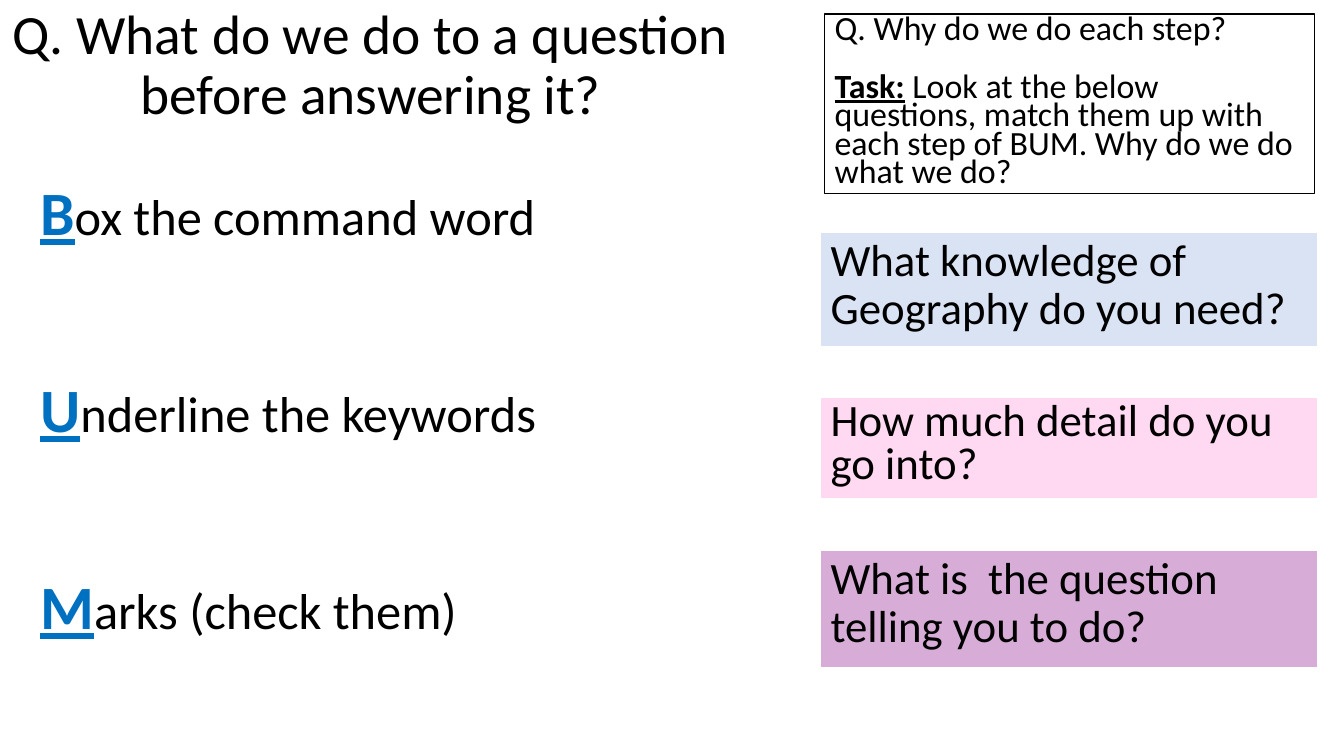
from dataclasses import dataclass

from lxml.etree import SubElement
from pptx import Presentation
from pptx.dml.color import RGBColor
from pptx.enum.shapes import MSO_SHAPE
from pptx.enum.text import MSO_ANCHOR, PP_ALIGN
from pptx.oxml.ns import qn
from pptx.util import Inches, Pt


@dataclass(frozen=True)
class Theme:
    font: str = "Calibri"
    ink: str = "000000"
    accent: str = "0070C0"
    paper: str = "FFFFFF"
    blue: str = "DAE3F3"
    pink: str = "FF8AD8"
    purple: str = "942093"
    title_size: float = 39.6
    initial_size: float = 44
    step_size: float = 36
    prompt_size: float = 32
    task_size: float = 24.2


THEME = Theme()
STEPS = ["Box the command word", "Underline the keywords", "Marks (check them)"]
PROMPTS = [
    ("What knowledge of Geography do you need?", 2.31, 1.13, THEME.blue, 100, 0.9),
    ("How much detail do you go into?", 3.94, 1.01, THEME.pink, 32, 0.8),
    ("What is  the question telling you to do?", 5.46, 1.16, THEME.purple, 37, 0.9),
]


def add_run(paragraph, text, size, color=THEME.ink, strong=False):
    run = paragraph.add_run()
    run.text = text
    run.font.name = THEME.font
    run.font.size = Pt(size)
    run.font.color.rgb = RGBColor.from_string(color)
    run.font.bold = strong
    run.font.underline = strong


def set_spacing(paragraph, lines, before=0, align=PP_ALIGN.LEFT):
    paragraph.line_spacing = lines
    paragraph.space_before = Pt(before)
    paragraph.alignment = align


def add_text_area(slide, left, top, width, height, anchor=MSO_ANCHOR.TOP):
    area = slide.shapes.add_textbox(Inches(left), Inches(top), Inches(width), Inches(height))
    area.text_frame.word_wrap = True
    area.text_frame.vertical_anchor = anchor
    return area.text_frame


def add_panel(slide, left, top, width, height, fill, line, line_width,
              opacity=100, anchor=MSO_ANCHOR.TOP):
    panel = slide.shapes.add_shape(
        MSO_SHAPE.RECTANGLE, Inches(left), Inches(top), Inches(width), Inches(height))
    panel.shadow.inherit = False
    panel.fill.solid()
    panel.fill.fore_color.rgb = RGBColor.from_string(fill)
    if opacity < 100:
        color = panel._element.spPr.find(qn("a:solidFill")).find(qn("a:srgbClr"))
        SubElement(color, qn("a:alpha")).set("val", str(opacity * 1000))
    panel.line.color.rgb = RGBColor.from_string(line)
    panel.line.width = Pt(line_width)
    panel.text_frame.word_wrap = True
    panel.text_frame.vertical_anchor = anchor
    return panel.text_frame


def add_title(slide):
    title = add_text_area(slide, 0, 0.14, 7.35, 1.04, MSO_ANCHOR.MIDDLE).paragraphs[0]
    set_spacing(title, 0.9, align=PP_ALIGN.CENTER)
    add_run(title, "Q. What do we do to a question before answering it?", THEME.title_size)


def add_steps(slide):
    steps = add_text_area(slide, 0.3, 1.82, 5.5, 4.81)
    for index, step in enumerate(STEPS):
        paragraph = steps.add_paragraph() if index else steps.paragraphs[0]
        set_spacing(paragraph, 0.8, 98.4 if index else 0)
        add_run(paragraph, step[0], THEME.initial_size, THEME.accent, strong=True)
        add_run(paragraph, step[1:], THEME.step_size)


def add_prompt(slide, question, top, height, fill, opacity, lines):
    panel = add_panel(slide, 8.14, top, 4.93, height, fill, THEME.paper, 0.75, opacity)
    prompt = panel.paragraphs[0]
    set_spacing(prompt, lines, 10)
    add_run(prompt, question, THEME.prompt_size)


def add_task(slide):
    panel = add_panel(slide, 8.18, 0.14, 4.86, 1.78, THEME.paper, THEME.ink, 1,
                      anchor=MSO_ANCHOR.MIDDLE)
    question = panel.paragraphs[0]
    set_spacing(question, 0.7)
    add_run(question, "Q. Why do we do each step?", THEME.task_size)
    task = panel.add_paragraph()
    set_spacing(task, 0.7, 20.7)
    add_run(task, "Task:", THEME.task_size, strong=True)
    add_run(task, " Look at the below questions, match them up with each step of BUM. "
            "Why do we do what we do?", THEME.task_size)


def main():
    deck = Presentation()
    deck.slide_width = Inches(13.33)
    deck.slide_height = Inches(7.5)
    slide = deck.slides.add_slide(deck.slide_layouts[6])
    add_title(slide)
    add_steps(slide)
    for prompt in PROMPTS:
        add_prompt(slide, *prompt)
    add_task(slide)
    deck.save("out.pptx")


if __name__ == "__main__":
    main()
